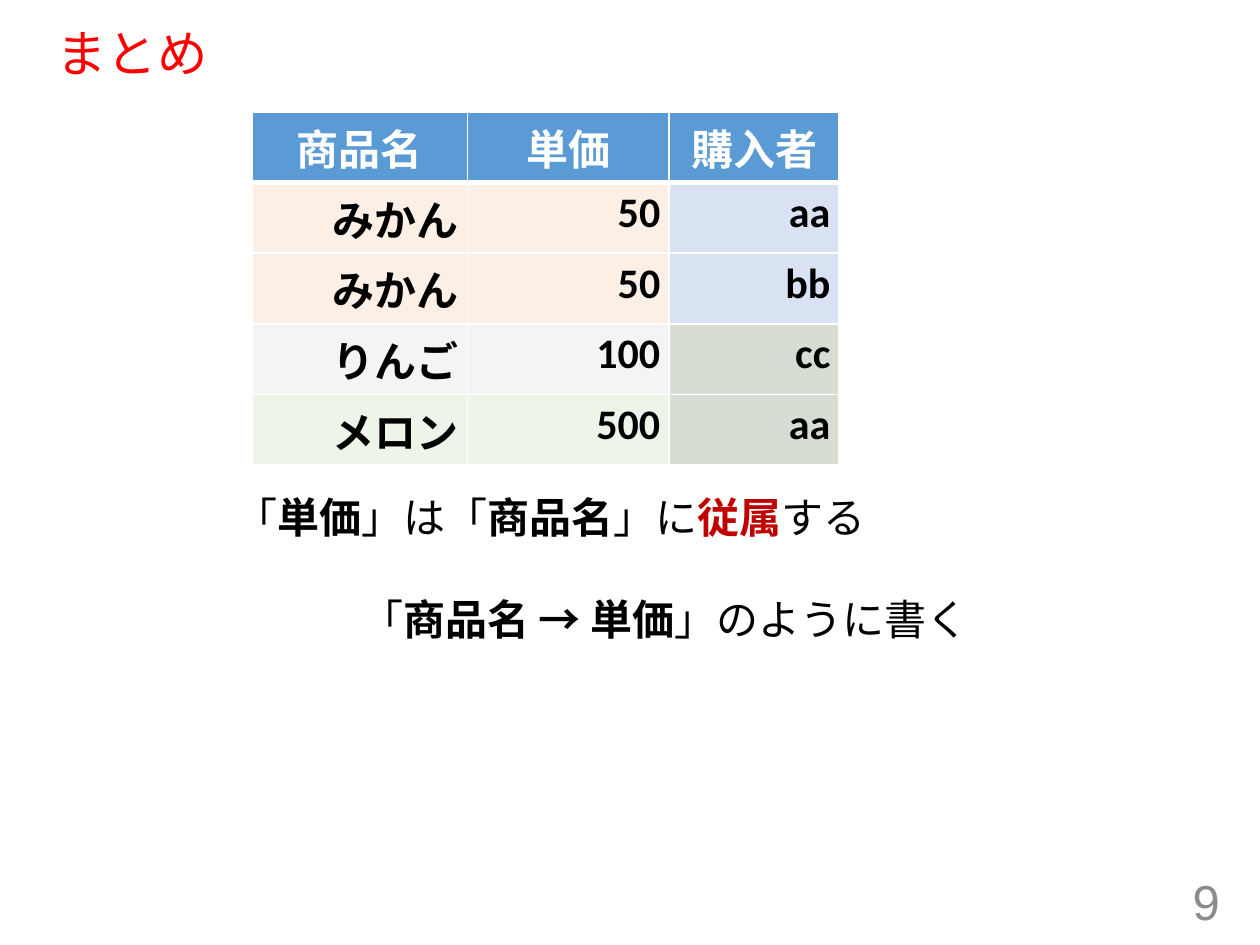
import lxml.etree
import pptx
import pptx.dml.color
import pptx.enum.text
import pptx.oxml.ns
import pptx.util

COLORS = {
    "title": "FF0000", "number": "8C8C8C", "accent": "C00000",
    "black": "000000", "white": "FFFFFF", "header": "5B9BD5",
    "orange": "F4B183", "gray": "C9C9C9", "green": "A9D18E",
    "blue": "4472C4", "forest": "385723",
}
JAPANESE_FONT = "Noto Sans CJK JP"
ALIGN = pptx.enum.text.PP_ALIGN
MIDDLE = pptx.enum.text.MSO_ANCHOR.MIDDLE
qn = pptx.oxml.ns.qn

presentation = pptx.Presentation()
presentation.slide_width = pptx.util.Inches(10)
presentation.slide_height = pptx.util.Inches(7.5)
slide = presentation.slides.add_slide(presentation.slide_layouts[6])
column = presentation.slide_width / 10
row = presentation.slide_height / 7.5


def add_text_box(left, top, width, height):
    shape = slide.shapes.add_textbox(
        int(left * column), int(top * row), int(width * column), int(height * row))
    shape.text_frame.word_wrap = True
    return shape.text_frame


def add_run(paragraph, text, size, font, color, bold=False):
    run = paragraph.add_run()
    run.text = text
    run.font.size = pptx.util.Pt(size)
    run.font.name = font
    run.font.bold = bold
    run.font.color.rgb = pptx.dml.color.RGBColor.from_string(COLORS[color])
    east_asian = lxml.etree.Element(qn("a:ea"), typeface=JAPANESE_FONT)
    run.font._element.find(qn("a:latin")).addnext(east_asian)


title = add_text_box(0.35, 0.19, 9.25, 0.51)
title.vertical_anchor = MIDDLE
title.paragraphs[0].line_spacing = 0.9
add_run(title.paragraphs[0], "まとめ", 28.8, "Arial", "title")

number = add_text_box(7.53, 6.95, 2.25, 0.4)
number.vertical_anchor = MIDDLE
number.paragraphs[0].alignment = ALIGN.RIGHT
add_run(number.paragraphs[0], "9", 28, "Arial", "number")

records = [
    (("商品名", "単価", "購入者"), "header", "header"),
    (("みかん", "50", "aa"), "orange", "blue"),
    (("みかん", "50", "bb"), "orange", "blue"),
    (("りんご", "100", "cc"), "gray", "forest"),
    (("メロン", "500", "aa"), "green", "forest"),
]
row_height = 0.56
table_frame = slide.shapes.add_table(
    len(records), 3, int(2 * column), int(0.89 * row),
    int(4.66 * column), int(len(records) * row_height * row))
table = table_frame.table
for table_column, width in zip(table.columns, (1.71, 1.6, 1.35)):
    table_column.width = int(width * column)

for row_index, (values, product_fill, buyer_fill) in enumerate(records):
    is_header = row_index == 0
    for column_index, value in enumerate(values):
        cell = table.cell(row_index, column_index)
        cell.margin_left = cell.margin_right = int(0.07 * column)
        cell.margin_top = cell.margin_bottom = int(0.04 * row)
        paragraph = cell.text_frame.paragraphs[0]
        paragraph.alignment = ALIGN.CENTER if is_header else ALIGN.RIGHT
        add_run(paragraph, value, 24, "Calibri", "white" if is_header else "black", True)

        properties = cell._tc.get_or_add_tcPr()
        for side in ("lnL", "lnR", "lnT", "lnB"):
            thick = (row_index, side) in ((0, "lnB"), (1, "lnT"))
            border = lxml.etree.SubElement(
                properties, qn("a:" + side), w=str(pptx.util.Pt(3 if thick else 1)))
            border_fill = lxml.etree.SubElement(border, qn("a:solidFill"))
            lxml.etree.SubElement(border_fill, qn("a:srgbClr"), val=COLORS["white"])

        fill_name = buyer_fill if column_index == 2 else product_fill
        cell.fill.solid()
        cell.fill.fore_color.rgb = pptx.dml.color.RGBColor.from_string(COLORS[fill_name])
        if not is_header:
            fill_color = properties.find(qn("a:solidFill")).find(qn("a:srgbClr"))
            lxml.etree.SubElement(fill_color, qn("a:alpha"), val="20000")

dependency = add_text_box(1.77, 3.85, 6.15, 1.31)
statement = dependency.paragraphs[0]
notation = dependency.add_paragraph()
notation.space_before = pptx.util.Pt(29)
notation._p.get_or_add_pPr().set("marL", str(pptx.util.Pt(3 * 24)))
sentences = [
    (statement, [("「", "black", False), ("単価", "black", True),
                 ("」は「", "black", False), ("商品名", "black", True),
                 ("」に", "black", False), ("従属", "accent", True),
                 ("する", "black", False)]),
    (notation, [("「", "black", False), ("商品名 → 単価", "black", True),
                ("」のように書く", "black", False)]),
]
for paragraph, pieces in sentences:
    paragraph.line_spacing = pptx.util.Pt(29)
    for text, color, bold in pieces:
        add_run(paragraph, text, 24, JAPANESE_FONT, color, bold)

presentation.save("out.pptx")
